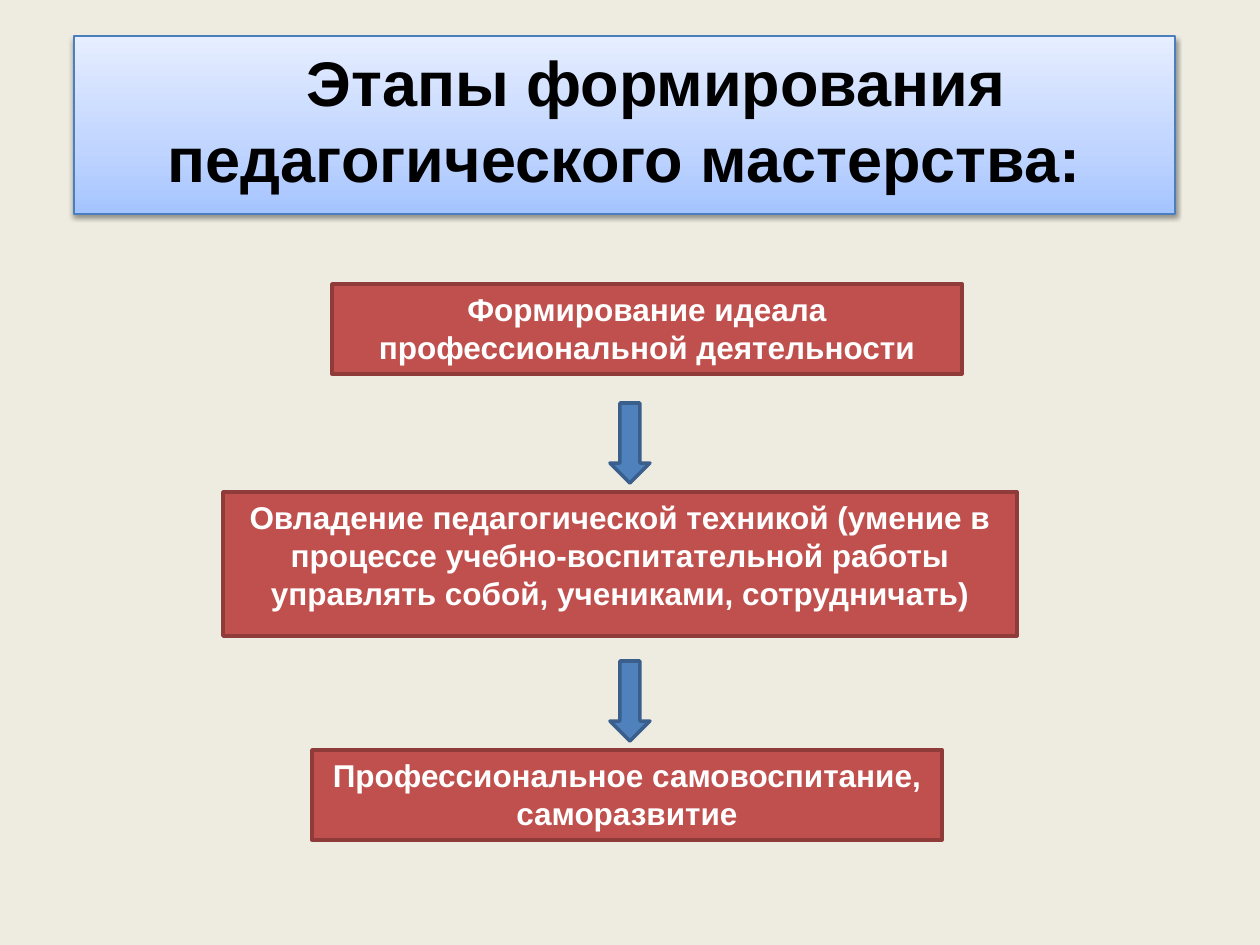
"""Build a slide with the stages of forming teaching mastery."""
from lxml.etree import SubElement
from pptx import Presentation
from pptx.dml.color import RGBColor
from pptx.enum.shapes import MSO_SHAPE
from pptx.enum.text import MSO_ANCHOR, PP_ALIGN
from pptx.oxml.ns import qn
from pptx.util import Emu, Pt

PX = 914400 / 126
C = {
    "bg": "EEECE1", "black": "000000", "white": "FFFFFF",
    "title_line": "4B7EBC", "box": "C0504D", "box_line": "8E3B39",
    "arrow": "4F81BD", "arrow_line": "3A5F8C",
}
GRADIENT = [(0, "A4C4FF"), (35, "BFD4FF"), (100, "E6EEFF")]


def add_box(s, kind, box, line, width, fill=None):
    sp = s.shapes.add_shape(kind, *[Emu(round(v * PX)) for v in box])
    sp.shadow.inherit = False
    if fill:
        sp.fill.solid()
        sp.fill.fore_color.rgb = RGBColor.from_string(C[fill])
    sp.line.color.rgb = RGBColor.from_string(C[line])
    sp.line.width = Pt(width)
    return sp


def add_text(sp, text, size=18, color="white", anchor=MSO_ANCHOR.TOP, indent=0, bottom=6):
    tf = sp.text_frame
    tf.word_wrap = True
    tf.vertical_anchor = anchor
    tf.margin_bottom = Emu(round(bottom * PX))
    p = tf.paragraphs[0]
    p.alignment = PP_ALIGN.CENTER
    if indent:
        p._p.get_or_add_pPr().set("indent", str(round(indent * PX)))
    r = p.add_run()
    r.text = text
    r.font.name = "Arial"
    r.font.size = Pt(size)
    r.font.bold = True
    r.font.color.rgb = RGBColor.from_string(C[color])


prs = Presentation()
prs.slide_width = Emu(round(1260 * PX))
prs.slide_height = Emu(round(945 * PX))
s = prs.slides.add_slide(prs.slide_layouts[6])
s.background.fill.solid()
s.background.fill.fore_color.rgb = RGBColor.from_string(C["bg"])

title = add_box(s, MSO_SHAPE.RECTANGLE, (74, 36, 1101, 178), "title_line", 0.75)
title.fill.gradient()
title.fill.gradient_angle = 90
spPr = title._element.spPr
stops = spPr.find(".//" + qn("a:gsLst"))
for gs in list(stops):
    stops.remove(gs)
for pos, color in GRADIENT:
    gs = SubElement(stops, qn("a:gs"), pos=str(pos * 1000))
    SubElement(gs, qn("a:srgbClr"), val=color)
shadow = SubElement(spPr.find(qn("a:effectLst")), qn("a:outerShdw"),
                    blurRad=str(Pt(3.1)), dist=str(Pt(1.6)), dir="5400000", rotWithShape="0")
clr = SubElement(shadow, qn("a:srgbClr"), val=C["black"])
SubElement(clr, qn("a:alpha"), val="38000")
add_text(title, "Этапы формирования педагогического мастерства:", size=36, color="black",
         anchor=MSO_ANCHOR.MIDDLE, indent=63, bottom=18)

stages = [
    ((332, 284, 630, 90), "Формирование идеала профессиональной деятельности"),
    ((223, 492, 794, 144), "Овладение педагогической техникой (умение в процессе "
     "учебно-воспитательной работы управлять собой, учениками, сотрудничать)"),
    ((312, 750, 630, 90), "Профессиональное самовоспитание, саморазвитие"),
]
for box, text in stages:
    add_text(add_box(s, MSO_SHAPE.RECTANGLE, box, "box_line", 2, fill="box"), text)

for box, text in stages[1:]:
    add_box(s, MSO_SHAPE.DOWN_ARROW, (610, box[1] - 89, 40, 80), "arrow_line", 2, fill="arrow")

prs.save("out.pptx")
